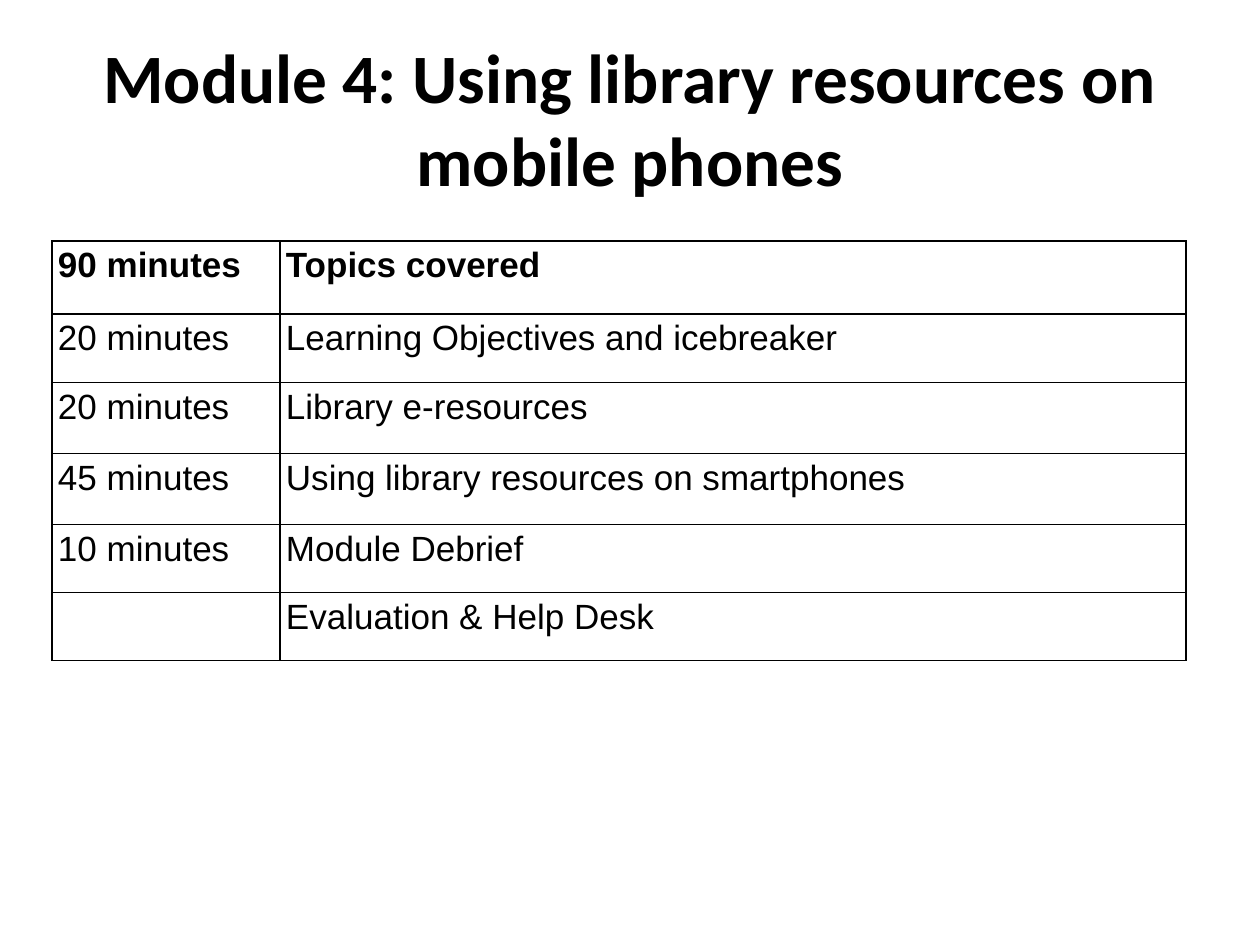
from lxml.etree import SubElement
from pptx import Presentation
from pptx.dml.color import RGBColor
from pptx.enum.text import MSO_ANCHOR, MSO_AUTO_SIZE, PP_ALIGN
from pptx.oxml.ns import qn
from pptx.util import Emu, Pt

PX_PER_INCH = 126
BLACK = RGBColor(0, 0, 0)
BORDER_WIDTH = Pt(0.75)

TITLE = "Module 4: Using library resources on mobile phones"
TITLE_BOX = (63, 38, 1134, 158)
TITLE_FONT = {"name": "Calibri", "size": Pt(39.6), "bold": True}

SCHEDULE = [
    ("90 minutes", "Topics covered"),
    ("20 minutes", "Learning Objectives and icebreaker"),
    ("20 minutes", "Library e-resources"),
    ("45 minutes", "Using library resources on smartphones"),
    ("10 minutes", "Module Debrief"),
    ("", "Evaluation & Help Desk"),
]
SCHEDULE_BOX = (52, 241, 1134, 420)
COLUMN_WIDTHS = (228, 906)
ROW_HEIGHTS = (73, 69, 71, 71, 68, 68)
CELL_FONT = {"name": "Arial", "size": Pt(20)}


def px(length):
    return Emu(round(length * 914400 / PX_PER_INCH))


def set_values(target, values):
    for name, value in values.items():
        setattr(target, name, value)


def format_font(font, values):
    set_values(font, values)
    font.color.rgb = BLACK


def add_borders(cell):
    properties = cell._tc.get_or_add_tcPr()
    for position, side in enumerate(("lnL", "lnR", "lnT", "lnB")):
        line = SubElement(properties, qn(f"a:{side}"), w=str(BORDER_WIDTH))
        fill = SubElement(line, qn("a:solidFill"))
        SubElement(fill, qn("a:srgbClr"), val=str(BLACK))
        properties.insert(position, line)


def place_title(page, box):
    title = page.shapes.title
    set_values(title, dict(zip(("left", "top", "width", "height"), map(px, box))))
    frame = title.text_frame
    set_values(frame, {
        "text": TITLE,
        "word_wrap": True,
        "auto_size": MSO_AUTO_SIZE.NONE,
        "vertical_anchor": MSO_ANCHOR.MIDDLE,
    })
    para = frame.paragraphs[0]
    para.alignment = PP_ALIGN.CENTER
    format_font(para.runs[0].font, TITLE_FONT)


def fill_cell(cell, text, bold):
    set_values(cell, {
        "margin_left": px(6),
        "margin_right": px(6),
        "margin_top": px(5),
        "margin_bottom": px(5),
        "vertical_anchor": MSO_ANCHOR.TOP,
    })
    cell.fill.background()
    add_borders(cell)
    para = cell.text_frame.paragraphs[0]
    format_font(para.font, CELL_FONT)
    if text:
        span = para.add_run()
        span.text = text
        format_font(span.font, CELL_FONT | {"bold": bold})


def place_schedule(page, box):
    table = page.shapes.add_table(
        len(SCHEDULE), len(COLUMN_WIDTHS), *map(px, box)
    ).table
    set_values(table, {"first_row": False, "horz_banding": False})
    for column, width in zip(table.columns, COLUMN_WIDTHS):
        column.width = px(width)
    for index, (row, height) in enumerate(zip(table.rows, ROW_HEIGHTS)):
        row.height = px(height)
        for cell, text in zip(row.cells, SCHEDULE[index]):
            fill_cell(cell, text, index == 0)


def main():
    deck = Presentation()
    set_values(deck, {"slide_width": px(1260), "slide_height": px(945)})
    page = deck.slides.add_slide(deck.slide_layouts.get_by_name("Title Only"))
    place_title(page, TITLE_BOX)
    place_schedule(page, SCHEDULE_BOX)
    deck.save("out.pptx")


if __name__ == "__main__":
    main()
